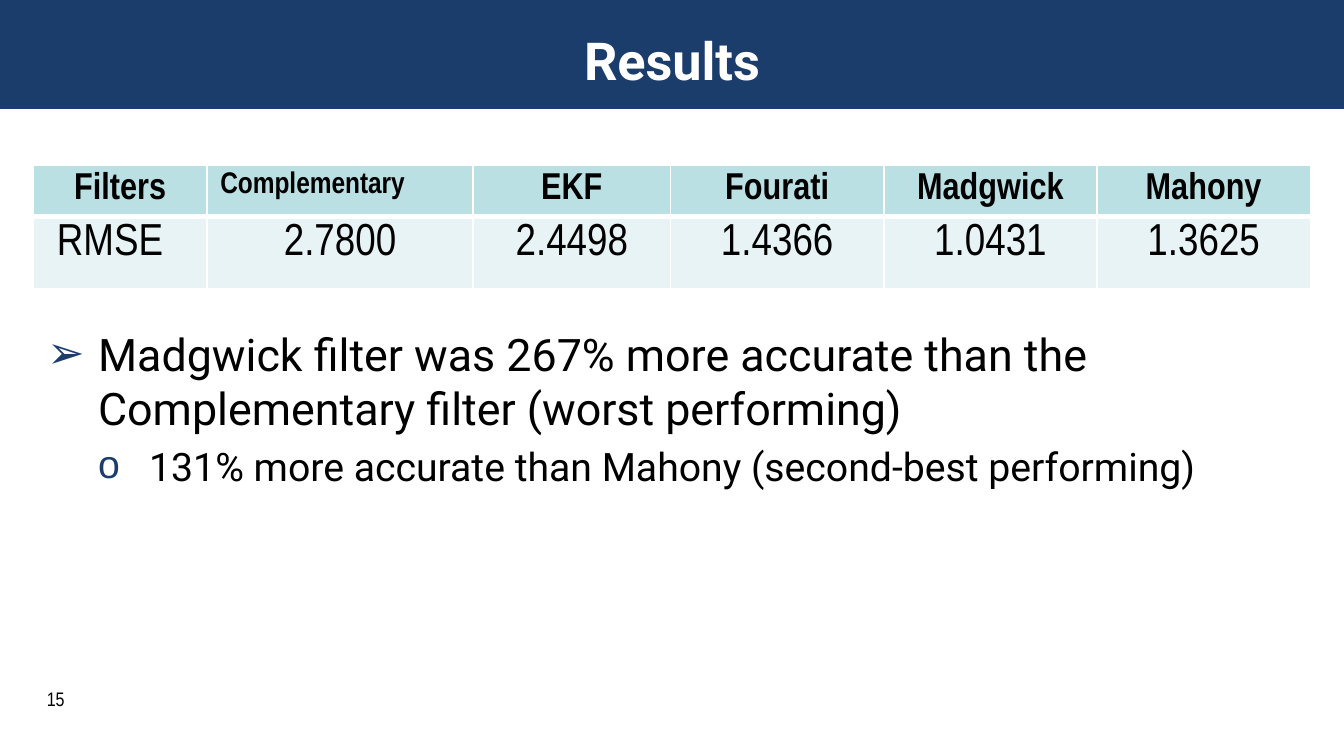
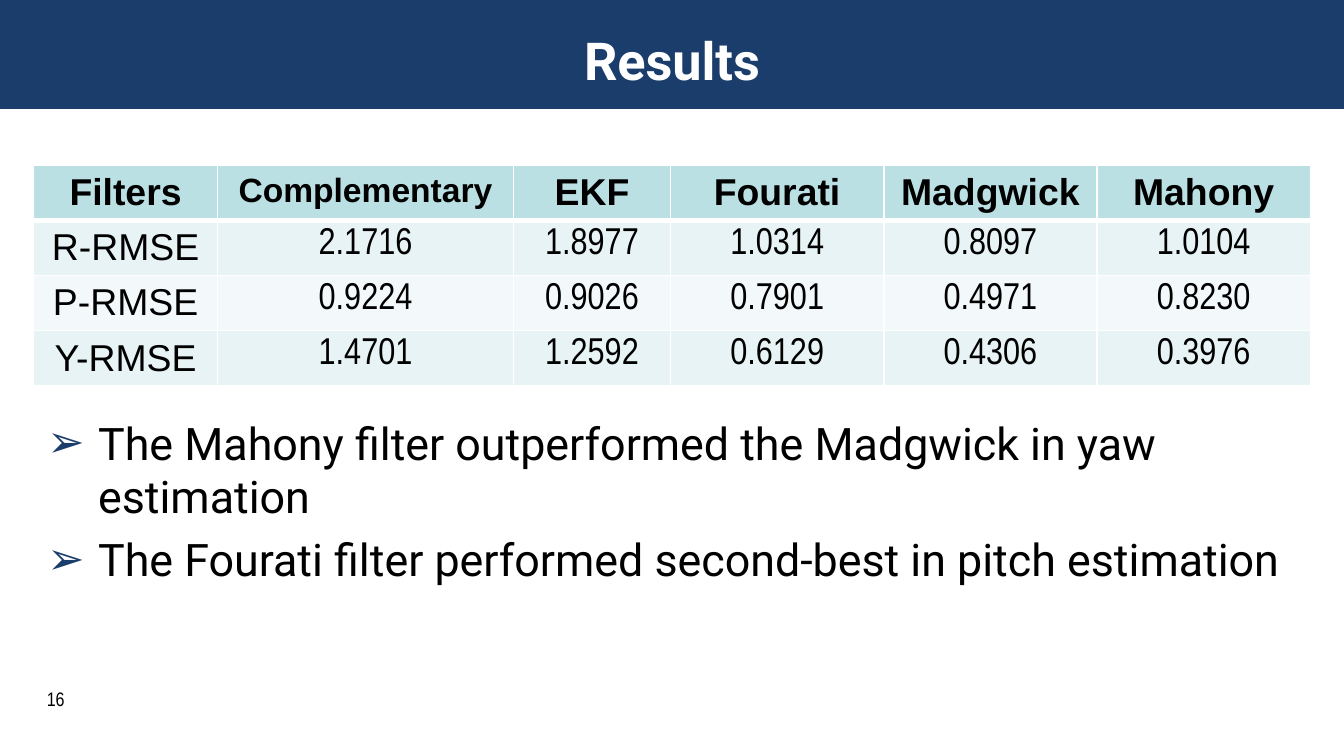
from lxml import etree
from pptx import Presentation
from pptx.dml.color import RGBColor
from pptx.enum.shapes import MSO_SHAPE
from pptx.enum.text import MSO_ANCHOR, MSO_AUTO_SIZE, PP_ALIGN
from pptx.oxml.ns import qn
from pptx.util import Inches, Pt

LEFT, CENTER = PP_ALIGN.LEFT, PP_ALIGN.CENTER
TOP, MIDDLE = MSO_ANCHOR.TOP, MSO_ANCHOR.MIDDLE
NO_FIT = MSO_AUTO_SIZE.NONE
RECT = MSO_SHAPE.RECTANGLE

# Shared style
NAVY, WHITE, BLACK = "1B3D6C", "FFFFFF", "000000"
HEADER_FILL, BAND_FILLS = "BBE0E3", ("E7F3F4", "F3F9FA")
SANS, NARROW, ROBOTO = "Arial", "Arial Narrow", "Roboto"
MARGIN, CONTENT_W = 0.25, 9.5
FIRST_NUMBER = 15
FILTERS = ["Filters", "Complementary", "EKF", "Fourati", "Madgwick", "Mahony"]
BULLETS = (("➢", 24), ("o", 21))  # character and text size by level

# first_cols: widths of the first columns; the others share the rest equally
SLIDES = [
    dict(
        rows=[["RMSE  ", "2.7800", "2.4498", "1.4366", "1.0431", "1.3625"]],
        first_cols=[1.29, 1.98, 1.47],
        heights=[0.38, 0.54],
        label_font=NARROW, long_size=16, long_align=LEFT, body_size=24,
        list_top=2.38,
        points=[
            (0, "Madgwick filter was 267% more accurate than the "
                "Complementary filter (worst performing)"),
            (1, "131% more accurate than Mahony (second-best performing)"),
        ],
    ),
    dict(
        rows=[
            ["R-RMSE", "2.1716", "1.8977", "1.0314", "0.8097", "1.0104"],
            ["P-RMSE", "0.9224", "0.9026", "0.7901", "0.4971", "0.8230"],
            ["Y-RMSE", "1.4701", "1.2592", "0.6129", "0.4306", "0.3976"],
        ],
        first_cols=[1.37, 2.2, 1.17],
        heights=[0.41] * 4,
        label_font=SANS, long_size=18, long_align=CENTER, body_size=20,
        list_top=3.04,
        points=[
            (0, "The Mahony filter outperformed the Madgwick in yaw estimation"),
            (0, "The Fourati filter performed second-best in pitch estimation"),
        ],
    ),
]


def rgb(value):
    return RGBColor.from_string(value)


def add_run(p, text, size, font, color=BLACK, bold=False):
    r = p.add_run()
    r.text = text
    r.font.size = Pt(size)
    r.font.name = font
    r.font.bold = bold
    r.font.color.rgb = rgb(color)


prs = Presentation()
prs.slide_width = Inches(10)
prs.slide_height = prs.slide_width * 9 // 16
layout = prs.slide_layouts[1]

for i, data in enumerate(SLIDES):
    s = prs.slides.add_slide(layout)

    # Title band, moved to the layout so that every slide shares it
    if i == 0:
        band = s.shapes.add_shape(RECT, 0, 0, prs.slide_width, Inches(0.81))
        band.shadow.inherit = False
        band.fill.solid()
        band.fill.fore_color.rgb = rgb(NAVY)
        band.line.fill.background()
        band.element.nvSpPr.cNvPr.set("id", "20")
        layout.shapes.element.insert(2, band.element)

    # Title
    title = s.shapes.title
    title.left, title.top = Inches(MARGIN), Inches(0.16)
    title.width, title.height = Inches(CONTENT_W), Inches(0.56)
    tf = title.text_frame
    tf.auto_size = NO_FIT
    tf.vertical_anchor = MIDDLE
    p = tf.paragraphs[0]
    p.alignment = CENTER
    add_run(p, "Results", 28, ROBOTO, WHITE, True)

    # Table of filter errors
    cells = [FILTERS] + data["rows"]
    frame = s.shapes.add_table(len(cells), len(FILTERS), Inches(MARGIN), Inches(1.23),
                               Inches(CONTENT_W), Inches(sum(data["heights"])))
    table = frame.table
    table.horz_banding = False
    first = data["first_cols"]
    others = len(FILTERS) - len(first)
    widths = first + [(CONTENT_W - sum(first)) / others] * others
    for col, width in zip(table.columns, widths):
        col.width = Inches(width)
    for row, height in zip(table.rows, data["heights"]):
        row.height = Inches(height)
    for y, values in enumerate(cells):
        for x, text in enumerate(values):
            cell = table.cell(y, x)
            header = y == 0
            cell.margin_top, cell.margin_bottom = Inches(0.05), 0
            cell.vertical_anchor = TOP

            # White borders, thicker under the header
            tcPr = cell._tc.get_or_add_tcPr()
            for side in "LRTB":
                thick = (y, side) in ((0, "B"), (1, "T"))
                ln = etree.SubElement(tcPr, qn("a:ln" + side), w=str(Pt(3 if thick else 1)))
                fill = etree.SubElement(ln, qn("a:solidFill"))
                etree.SubElement(fill, qn("a:srgbClr"), val=WHITE)
            cell.fill.solid()
            cell.fill.fore_color.rgb = rgb(HEADER_FILL if header else BAND_FILLS[(y - 1) % 2])

            long_name = header and x == 1
            font = data["label_font"] if header or x == 0 else NARROW
            size = 20 if header else data["body_size"]
            p = cell.text_frame.paragraphs[0]
            p.alignment = data["long_align"] if long_name else CENTER
            add_run(p, text, data["long_size"] if long_name else size, font, bold=header)

    # Slide number
    box = s.shapes.add_textbox(Inches(MARGIN), Inches(5.06), Inches(1), Inches(0.19))
    tf = box.text_frame
    tf.word_wrap = True
    add_run(tf.paragraphs[0], str(FIRST_NUMBER + i), 10.5, NARROW)

    # Findings
    body = s.placeholders[1]
    body.left, body.top = Inches(MARGIN), Inches(data["list_top"])
    body.width, body.height = Inches(CONTENT_W), Inches(3.68)
    tf = body.text_frame
    tf.auto_size = NO_FIT
    for n, (level, text) in enumerate(data["points"]):
        p = tf.paragraphs[0] if n == 0 else tf.add_paragraph()
        char, size = BULLETS[level]
        p.level = level
        pPr = p._p.get_or_add_pPr()
        pPr.set("marL", str(Inches(0.38 * (level + 1))))
        pPr.set("indent", str(Inches(-0.38)))
        color = etree.SubElement(pPr, qn("a:buClr"))
        etree.SubElement(color, qn("a:srgbClr"), val=NAVY)
        etree.SubElement(pPr, qn("a:buChar"), char=char)
        p.space_before = Pt(0.2 * size if n else 0)
        add_run(p, text, size, ROBOTO)

prs.save("out.pptx")
